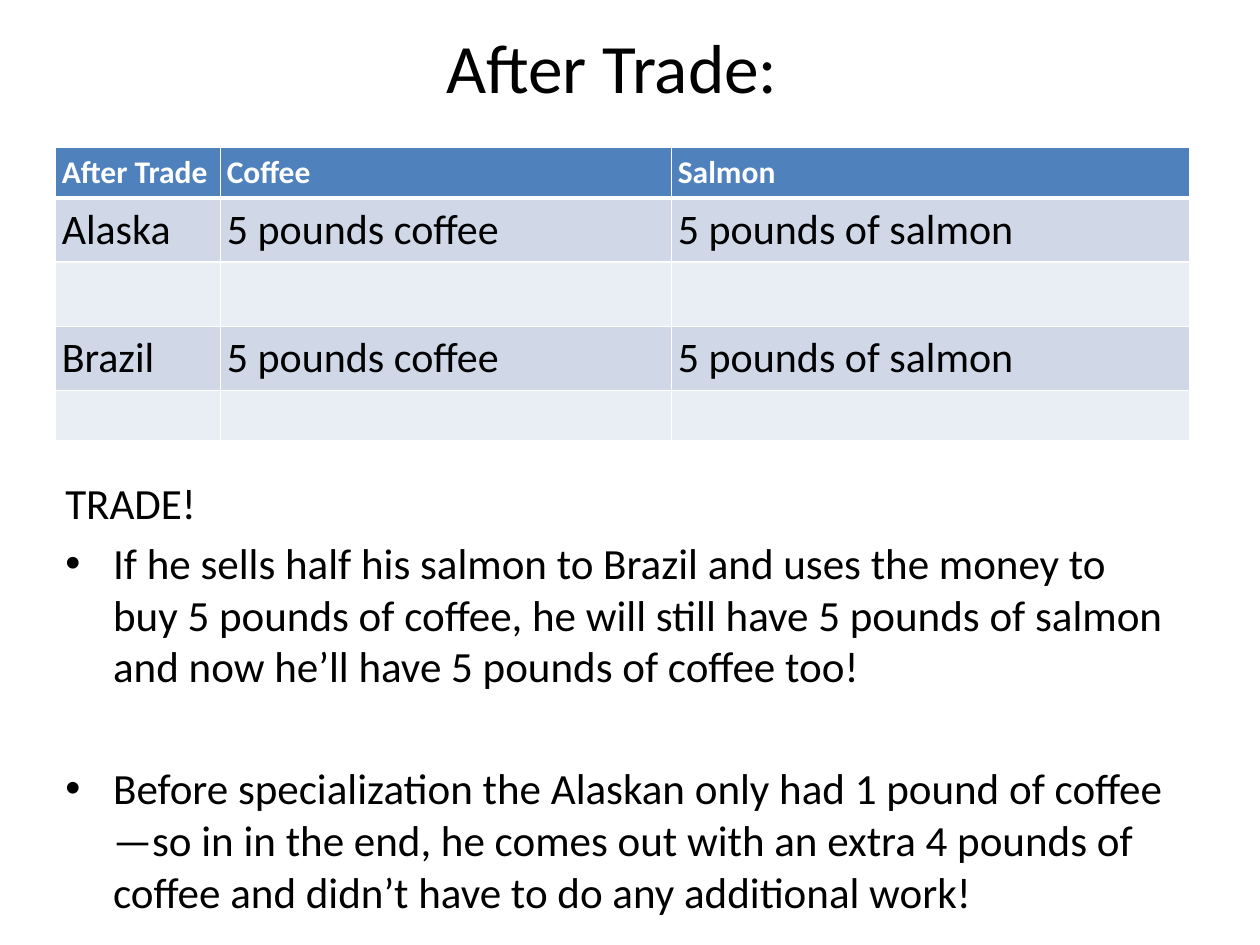
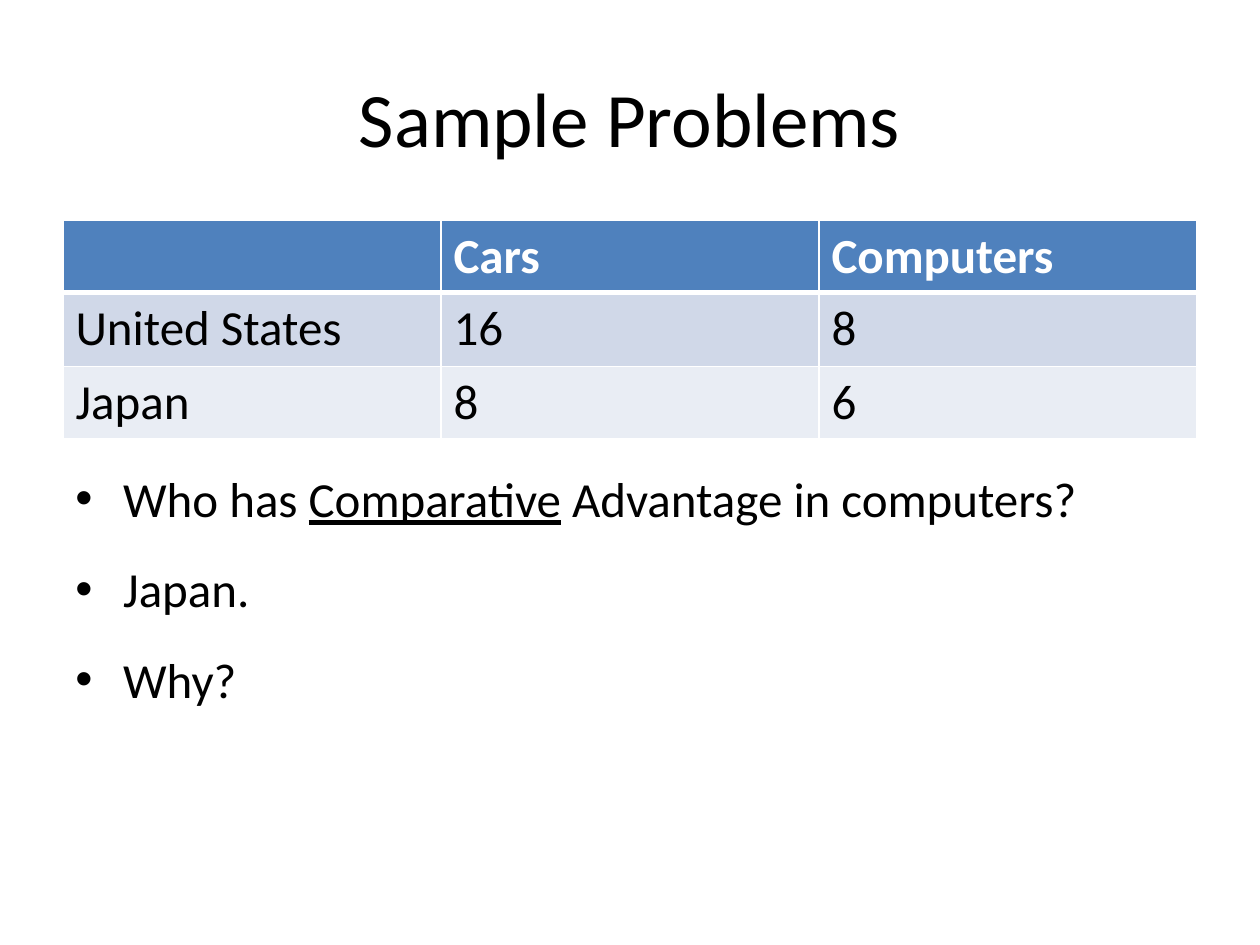
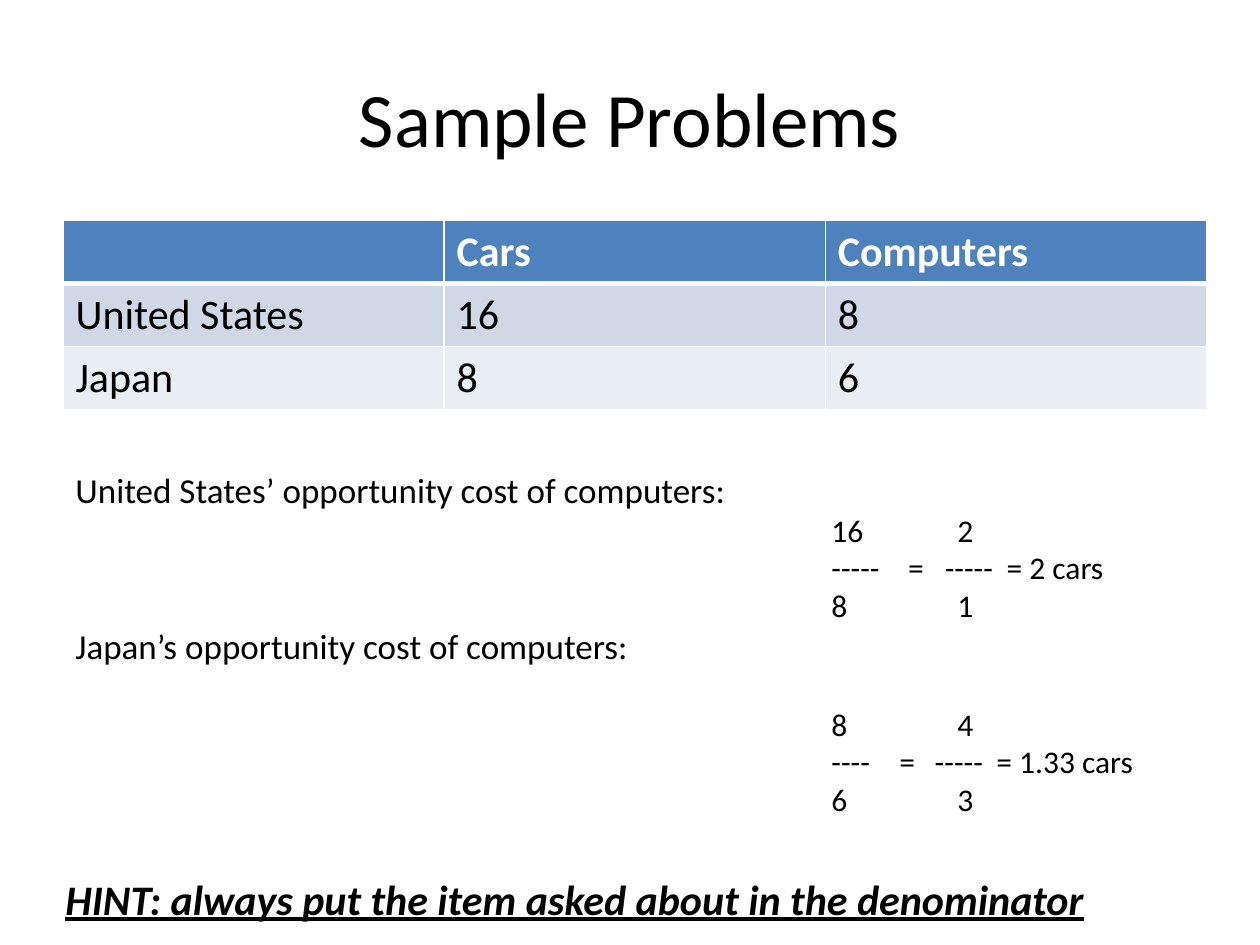
"""Build three lesson slides on trade and comparative advantage."""
from pptx import Presentation
from pptx import util as u
from pptx.dml.color import RGBColor
from pptx.enum import text
from pptx.oxml import parse_xml
from pptx.oxml.ns import nsdecls

COLORS = {"header": "4F81BD", "odd": "D0D8E8", "even": "E9EDF4",
          "white": "FFFFFF", "black": "000000"}
FONT = "Calibri"

prs = Presentation()
prs.slide_width, prs.slide_height = u.Inches(10), u.Inches(7.5)
COL, ROW = prs.slide_width / 100, prs.slide_height / 75


def add_text(tf, content, size=24, color="black", bold=False, italic=False, underline=False,
             align=None, before=0, after=0, bullet=False, tabs=(), same_line=False):
    """Write a paragraph, or continue the last one, in the given format."""
    p = tf.paragraphs[-1]
    if not same_line:
        p = tf.add_paragraph() if p.runs else p
        p.alignment = align
        p.space_before, p.space_after = u.Pt(before), u.Pt(after)
        pPr = p._p.get_or_add_pPr()
        if bullet:
            indent = u.Inches(0.38)
            pPr.set("marL", str(indent))
            pPr.set("indent", str(-indent))
            pPr.append(parse_xml(f'<a:buFont {nsdecls("a")} typeface="Arial"/>'))
            pPr.append(parse_xml(f'<a:buChar {nsdecls("a")} char="•"/>'))
        if tabs:
            stops = "".join(f'<a:tab pos="{u.Inches(t)}" algn="l"/>' for t in tabs)
            pPr.append(parse_xml(f'<a:tabLst {nsdecls("a")}>{stops}</a:tabLst>'))
    r = p.add_run()
    r.text = content
    r.font.name, r.font.size = FONT, u.Pt(size)
    r.font.bold, r.font.italic, r.font.underline = bold, italic, underline
    r.font.color.rgb = RGBColor.from_string(COLORS[color])


def add_box(s, left, top, width, height, anchor=text.MSO_ANCHOR.TOP):
    """Add a wrapping text box, placed in grid columns and rows."""
    box = s.shapes.add_textbox(int(left * COL), int(top * ROW), int(width * COL), int(height * ROW))
    tf = box.text_frame
    tf.word_wrap, tf.vertical_anchor = True, anchor
    return tf


OUTPUT = [["", "Cars", "Computers"], ["United States", "16", "8"], ["Japan", "8", "6"]]
AFTER_TRADE = [["After Trade", "Coffee", "Salmon"],
               ["Alaska", "5 pounds coffee", "5 pounds of salmon"], [""] * 3,
               ["Brazil", "5 pounds coffee", "5 pounds of salmon"], [""] * 3]
PAGES = [
    dict(title="After Trade: ", title_at=(4.2, 1.7, 90, 7), title_size=39.6, table_at=(4.4, 11.7),
         cols=[13.1, 35.8, 41.1], rows=[4, 5.1, 5.1, 5.1, 4], cells=AFTER_TRADE,
         head_size=18, size=24, inset=0.05),
    dict(title="Sample Problems", title_at=(5, 3, 90, 12.5), title_size=44, table_at=(5, 17.5),
         cols=[30] * 3, rows=[5.7, 5.9, 5.7], cells=OUTPUT, head_size=28, size=28, inset=0.1),
    dict(title="Sample Problems", title_at=(5, 3, 90, 12.5), title_size=44, table_at=(5, 17.5),
         cols=[30.25] * 3, rows=[5] * 3, cells=OUTPUT, head_size=24, size=24, inset=0.1),
]

slides = []
for page in PAGES:
    s = prs.slides.add_slide(prs.slide_layouts[6])
    slides.append(s)
    tf = add_box(s, *page["title_at"], anchor=text.MSO_ANCHOR.MIDDLE)
    add_text(tf, page["title"], size=page["title_size"], align=text.PP_ALIGN.CENTER)

    left, top = page["table_at"]
    cols, rows = page["cols"], page["rows"]
    table = s.shapes.add_table(len(rows), len(cols), int(left * COL), int(top * ROW),
                               int(sum(cols) * COL), int(sum(rows) * ROW)).table
    for column, width in zip(table.columns, cols):
        column.width = int(width * COL)
    for i, height in enumerate(rows):
        table.rows[i].height = int(height * ROW)
        for j, value in enumerate(page["cells"][i]):
            cell = table.cell(i, j)
            cell.margin_left = cell.margin_right = u.Inches(page["inset"])
            cell.margin_top = cell.margin_bottom = u.Inches(0.05)
            for side in "LRTB":
                points = 3 if (i, side) in ((0, "B"), (1, "T")) else 1
                cell._tc.get_or_add_tcPr().append(parse_xml(
                    f'<a:ln{side} {nsdecls("a")} w="{u.Pt(points)}"><a:solidFill>'
                    f'<a:srgbClr val="{COLORS["white"]}"/></a:solidFill></a:ln{side}>'))
            cell.fill.solid()
            band = "header" if i == 0 else "odd" if i % 2 else "even"
            cell.fill.fore_color.rgb = RGBColor.from_string(COLORS[band])
            if value:
                add_text(cell.text_frame, value, size=page["size"] if i else page["head_size"],
                         color="black" if i else "white", bold=i == 0)

trade, question, answer = slides

tf = add_box(trade, 4.2, 37.3, 90, 35)
add_text(tf, "TRADE!", size=24.6)
add_text(tf, "If he sells half his salmon to Brazil and uses the money to buy 5 pounds of coffee, "
         "he will still have 5 pounds of salmon and now he’ll have 5 pounds of coffee too!",
         size=24.6, before=5, bullet=True)
add_text(tf, "Before specialization the Alaskan only had 1 pound of coffee—so in in the end, he comes "
         "out with an extra 4 pounds of coffee and didn’t have to do any additional work!",
         size=24.6, before=40, bullet=True)

tf = add_box(question, 5, 36.7, 90, 34.5)
bullets = dict(size=28, before=6, after=12, bullet=True)
add_text(tf, "Who has ", **bullets)
add_text(tf, "Comparative", size=28, underline=True, same_line=True)
add_text(tf, " Advantage in computers?", size=28, same_line=True)
add_text(tf, "Japan.", **bullets)
add_text(tf, "Why?", **bullets)

tf = add_box(answer, 4.2, 64.2, 94.2, 9.1, anchor=text.MSO_ANCHOR.BOTTOM)
tf.margin_bottom = 0
add_text(tf, "HINT: always put the item asked about in the denominator",
         bold=True, italic=True, underline=True)

COSTS = [
    ("United States’", "16\t2", "-----\t=\t-----\t= 2 cars", "8\t1", 0, (6, 6.61, 6.9, 7.39)),
    ("Japan’s", "8\t4", "----\t=\t-----\t= 1.33 cars", "6\t3", 22, (6, 6.54, 6.82, 7.31)),
]
tf = add_box(answer, 5, 36.7, 90.8, 28.9)
for owner, numerators, bars, denominators, gap, bar_tabs in COSTS:
    add_text(tf, f"{owner} opportunity cost of computers:", size=20)
    add_text(tf, "\t" + numerators, size=18, before=gap, tabs=(6, 7))
    add_text(tf, "\t" + bars, size=18, tabs=bar_tabs)
    add_text(tf, "\t" + denominators, size=18, tabs=(6, 7))

prs.save("out.pptx")
